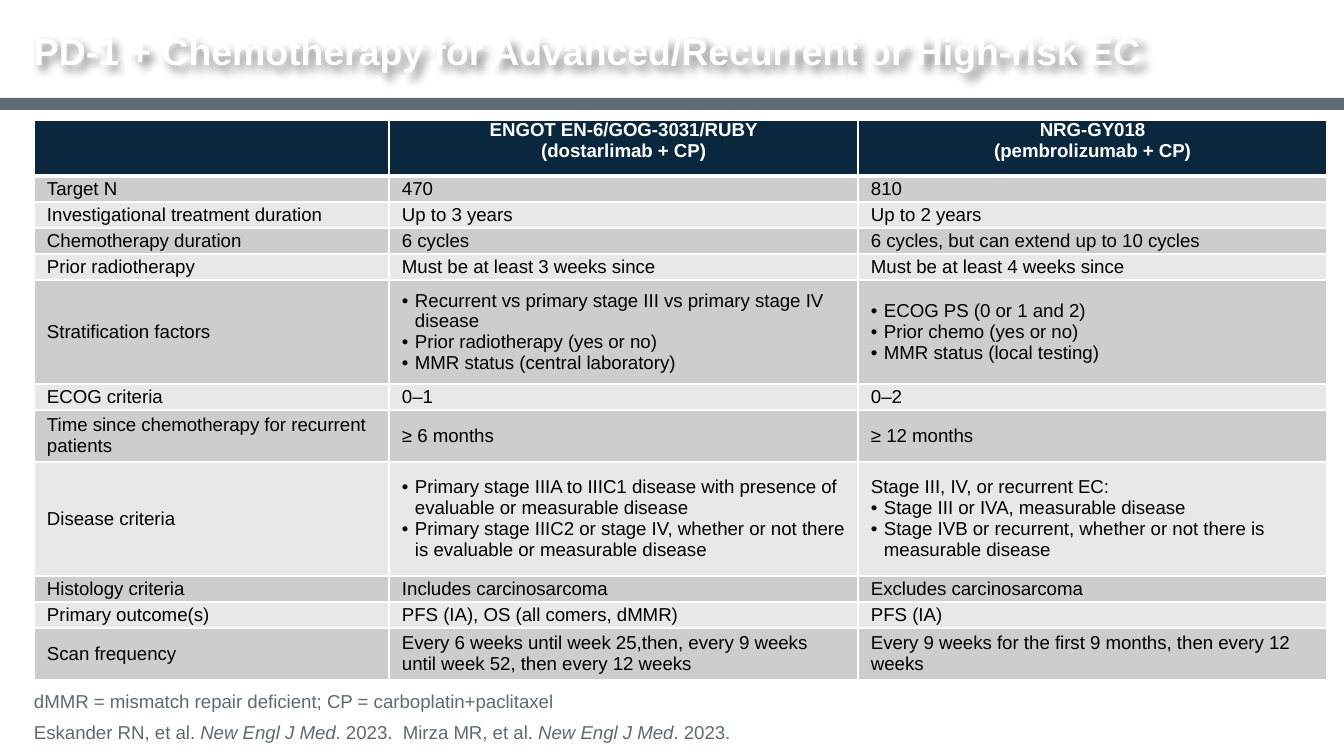
from dataclasses import dataclass

from lxml import etree
from pptx import Presentation
from pptx.dml.color import RGBColor
from pptx.enum.shapes import MSO_SHAPE
from pptx.enum.text import MSO_ANCHOR, PP_ALIGN
from pptx.oxml.ns import qn
from pptx.util import Emu, Pt

RECTANGLE = MSO_SHAPE.RECTANGLE
TOP, MIDDLE, BOTTOM = MSO_ANCHOR.TOP, MSO_ANCHOR.MIDDLE, MSO_ANCHOR.BOTTOM
LEFT, CENTER = PP_ALIGN.LEFT, PP_ALIGN.CENTER
BLANK_LAYOUT = 6
PIXELS_PER_INCH = 134.4
BULLET = "• "


def px(value):
    return Emu(round(value * 914400 / PIXELS_PER_INCH))


@dataclass(frozen=True)
class Theme:
    font: str = "Arial"
    white: str = "FFFFFF"
    black: str = "000000"
    slate: str = "5C6B72"
    navy: str = "0B273E"
    bands: tuple = ("CCCDCE", "E7E8E8")
    title_size: int = 20
    body_size: int = 10
    line_spacing: float = 0.85
    thin_border: int = 1
    thick_border: int = 3


def apply(target, formats):
    for name, value in formats.items():
        setattr(target, name, value)


def add_element(parent, tag, **attributes):
    element = etree.SubElement(parent, qn(tag))
    for name, value in attributes.items():
        element.set(name, str(value))
    return element


class SlideBuilder:
    def __init__(self, slide, theme):
        self.slide = slide
        self.theme = theme

    def add_run(self, paragraph, text, size, color, bold=False, italic=False):
        run = paragraph.add_run()
        run.text = text
        apply(run.font, {"name": self.theme.font, "size": Pt(size),
                         "bold": bold, "italic": italic})
        run.font.color.rgb = RGBColor.from_string(color)

    def add_bar(self, left, top, width, height, color):
        shape = self.slide.shapes.add_shape(
            RECTANGLE, px(left), px(top), px(width), px(height))
        shape.shadow.inherit = False
        shape.fill.solid()
        shape.fill.fore_color.rgb = RGBColor.from_string(color)
        shape.line.fill.background()

    def add_text(self, box, lines, margins, anchor, size, color, bold=False):
        shape = self.slide.shapes.add_textbox(*map(px, box))
        frame = shape.text_frame
        left, top, right, bottom = map(px, margins)
        apply(frame, {"word_wrap": True, "vertical_anchor": anchor,
                      "margin_left": left, "margin_top": top,
                      "margin_right": right, "margin_bottom": bottom})
        for index, runs in enumerate(lines):
            paragraph = frame.add_paragraph() if index else frame.paragraphs[0]
            apply(paragraph, {"line_spacing": self.theme.line_spacing,
                              "space_before": Pt(6 if index else 0)})
            for text, italic in runs:
                self.add_run(paragraph, text, size, color, bold, italic)
        return shape

    def add_text_shadow(self, shape):
        effects = add_element(shape._element.spPr, "a:effectLst")
        shadow = add_element(effects, "a:outerShdw", blurRad=px(7), dist=px(7),
                             dir=2700000, algn="tl", rotWithShape=0)
        color = add_element(shadow, "a:srgbClr", val=self.theme.black)
        add_element(color, "a:alpha", val=43000)

    def add_borders(self, cell, top, bottom):
        properties = cell._tc.get_or_add_tcPr()
        thin = self.theme.thin_border
        sides = {"a:lnL": thin, "a:lnR": thin, "a:lnT": top, "a:lnB": bottom}
        for index, (tag, width) in enumerate(sides.items()):
            line = add_element(properties, tag, w=Pt(width))
            fill = add_element(line, "a:solidFill")
            add_element(fill, "a:srgbClr", val=self.theme.white)
            properties.insert(index, line)

    def fill_cell(self, cell, text, row):
        theme = self.theme
        header = row == 0
        apply(cell, {"margin_left": px(13), "margin_right": px(13),
                     "margin_top": 0, "margin_bottom": 0,
                     "vertical_anchor": TOP if header else MIDDLE})
        cell.fill.solid()
        cell.fill.fore_color.rgb = RGBColor.from_string(
            theme.navy if header else theme.bands[(row - 1) % 2])
        self.add_borders(
            cell,
            theme.thick_border if row == 1 else theme.thin_border,
            theme.thick_border if header else theme.thin_border)
        for index, line in enumerate(text.splitlines()):
            frame = cell.text_frame
            paragraph = frame.add_paragraph() if index else frame.paragraphs[0]
            if line.startswith(BULLET):
                properties = paragraph._p.get_or_add_pPr()
                properties.set("marL", str(px(13)))
                properties.set("indent", str(-px(13)))
                add_element(properties, "a:buFont", typeface=theme.font)
                add_element(properties, "a:buChar", char=BULLET.strip())
            paragraph.alignment = CENTER if header else LEFT
            self.add_run(paragraph, line.removeprefix(BULLET), theme.body_size,
                         theme.white if header else theme.black, bold=header)

    def add_table(self, left, top, columns, heights, rows):
        table = self.slide.shapes.add_table(
            len(rows), len(columns), px(left), px(top),
            px(sum(columns)), px(sum(heights))).table
        for column, width in zip(table.columns, columns):
            column.width = px(width)
        for row, (height, texts) in enumerate(zip(heights, rows)):
            table.rows[row].height = px(height)
            for column, text in enumerate(texts):
                self.fill_cell(table.cell(row, column), text, row)


TRIALS = [
    ("", "ENGOT EN-6/GOG-3031/RUBY\n(dostarlimab + CP)",
     "NRG-GY018\n(pembrolizumab + CP)"),
    ("Target N", "470", "810"),
    ("Investigational treatment duration", "Up to 3 years", "Up to 2 years"),
    ("Chemotherapy duration", "6 cycles",
     "6 cycles, but can extend up to 10 cycles"),
    ("Prior radiotherapy", "Must be at least 3 weeks since",
     "Must be at least 4 weeks since"),
    ("Stratification factors",
     "• Recurrent vs primary stage III vs primary stage IV disease\n"
     "• Prior radiotherapy (yes or no)\n• MMR status (central laboratory)",
     "• ECOG PS (0 or 1 and 2)\n• Prior chemo (yes or no)\n"
     "• MMR status (local testing)"),
    ("ECOG criteria", "0–1", "0–2"),
    ("Time since chemotherapy for recurrent patients",
     "≥ 6 months", "≥ 12 months"),
    ("Disease criteria",
     "• Primary stage IIIA to IIIC1 disease with presence of evaluable or "
     "measurable disease\n• Primary stage IIIC2 or stage IV, whether or not "
     "there is evaluable or measurable disease",
     "Stage III, IV, or recurrent EC:\n• Stage III or IVA, measurable disease\n"
     "• Stage IVB or recurrent, whether or not there is measurable disease"),
    ("Histology criteria", "Includes carcinosarcoma", "Excludes carcinosarcoma"),
    ("Primary outcome(s)", "PFS (IA), OS (all comers, dMMR)", "PFS (IA)"),
    ("Scan frequency",
     "Every 6 weeks until week 25,then, every 9 weeks until week 52, "
     "then every 12 weeks",
     "Every 9 weeks for the first 9 months, then every 12 weeks"),
]
ROW_HEIGHTS = [56, 26, 26, 26, 26, 104, 26, 52, 114, 26, 26, 52]
TITLE = [[("PD-1 + Chemotherapy for Advanced/Recurrent or High-risk EC", False)]]
FOOTNOTES = [
    [("dMMR = mismatch repair deficient; CP = carboplatin+paclitaxel", False)],
    [("Eskander RN, et al. ", False), ("New Engl J Med", True),
     (". 2023.  Mirza MR, et al. ", False), ("New Engl J Med", True),
     (". 2023.", False)],
]


def main():
    presentation = Presentation()
    apply(presentation, {"slide_width": px(1344), "slide_height": px(756)})
    slide = presentation.slides.add_slide(
        presentation.slide_layouts[BLANK_LAYOUT])
    theme = Theme()
    builder = SlideBuilder(slide, theme)
    builder.add_bar(0, 98, 1344, 12, theme.slate)
    title = builder.add_text((34, 28, 1284, 52), TITLE, (0, 7, 0, 7), MIDDLE,
                             theme.title_size, theme.white, bold=True)
    builder.add_text_shadow(title)
    builder.add_text((0, 671, 1184, 85), FOOTNOTES, (34, 0, 0, 13), BOTTOM,
                     theme.body_size, theme.slate)
    builder.add_table(34, 120, [355, 469, 469], ROW_HEIGHTS, TRIALS)
    presentation.save("out.pptx")


if __name__ == "__main__":
    main()
